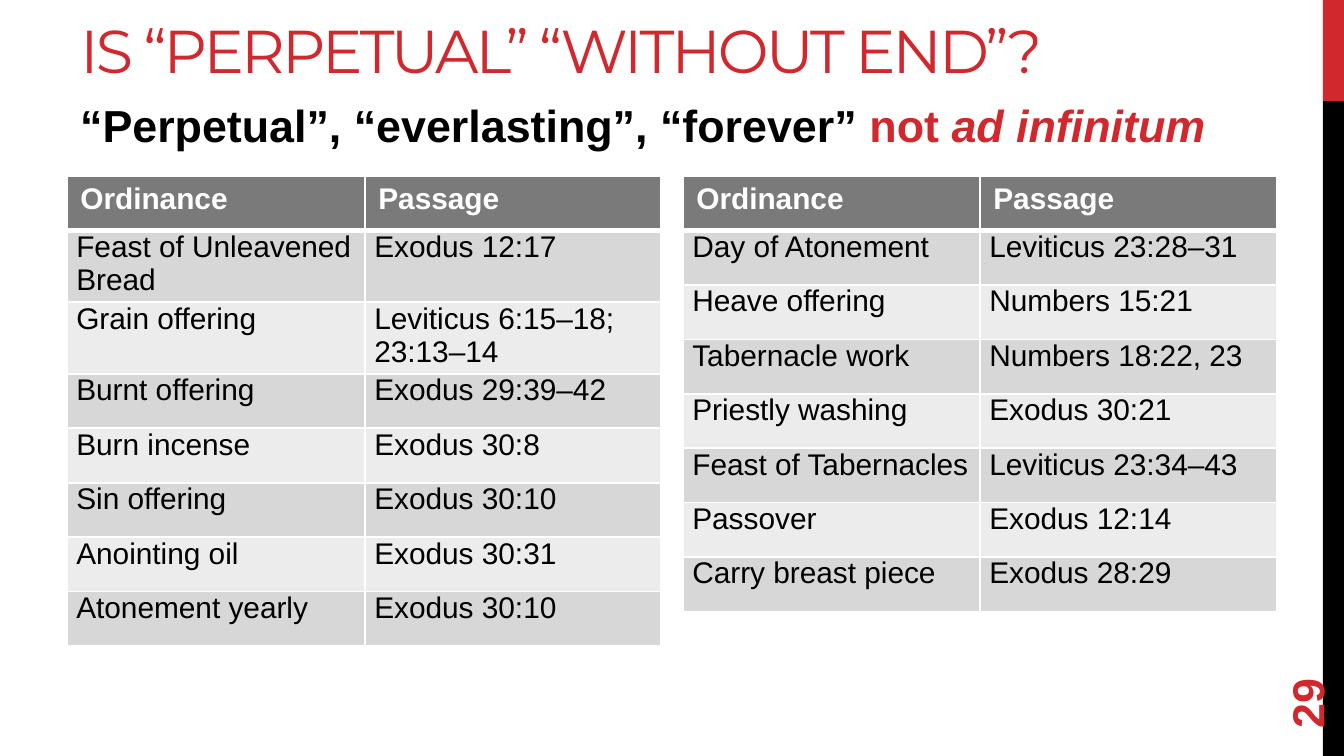
from pptx import Presentation
from pptx import util as u
from pptx.dml.color import RGBColor
from pptx.enum import shapes, text
from pptx.oxml import parse_xml
from pptx.oxml.ns import nsdecls

WIDTH, HEIGHT = 1344, 756
SCALE = u.Inches(10) / WIDTH
COLORS = {
    "red": "D1282E", "black": "000000", "white": "FFFFFF",
    "header": "7A7A7A", "dark_band": "D7D7D7", "light_band": "ECECEC",
}

LEFT_ROWS = [
    ("Feast of Unleavened Bread", "Exodus 12:17"),
    ("Grain offering", "Leviticus 6:15–18; \n23:13–14"),
    ("Burnt offering", "Exodus 29:39–42"),
    ("Burn incense", "Exodus 30:8"),
    ("Sin offering", "Exodus 30:10"),
    ("Anointing oil", "Exodus 30:31"),
    ("Atonement yearly", "Exodus 30:10"),
]
RIGHT_ROWS = [
    ("Day of Atonement", "Leviticus 23:28–31"),
    ("Heave offering", "Numbers 15:21"),
    ("Tabernacle work", "Numbers 18:22, 23"),
    ("Priestly washing", "Exodus 30:21"),
    ("Feast of Tabernacles", "Leviticus 23:34–43"),
    ("Passover", "Exodus 12:14"),
    ("Carry breast piece", "Exodus 28:29"),
]


def px(value):
    return u.Emu(round(value * SCALE))


def rgb(name):
    return RGBColor.from_string(COLORS[name])


class Board:
    """Holds the style and the current slide."""
    font = "Arial"
    title_font = "Montserrat"

    def __init__(self, deck):
        self.slide = deck.slides.add_slide(deck.slide_layouts[5])

    def span(self, para, words, size, color, bold=False, italic=False, font=None):
        span = para.add_run()
        span.text = words
        span.font.name = font or self.font
        span.font.size = u.Pt(size)
        span.font.bold = bold
        span.font.italic = italic
        span.font.color.rgb = rgb(color)
        return span

    def bar(self, left, top, width, height, color):
        bar = self.slide.shapes.add_shape(
            shapes.MSO_SHAPE.RECTANGLE, *map(px, (left, top, width, height)))
        bar.shadow.inherit = False
        bar.fill.solid()
        bar.fill.fore_color.rgb = rgb(color)
        bar.line.fill.background()

    def title(self, left, top, width, height, words):
        box = self.slide.shapes.title
        box.left, box.top, box.width, box.height = map(px, (left, top, width, height))
        frame = box.text_frame
        frame.auto_size = text.MSO_AUTO_SIZE.NONE
        frame.vertical_anchor = text.MSO_ANCHOR.MIDDLE
        para = frame.paragraphs[0]
        para.alignment = text.PP_ALIGN.LEFT
        span = self.span(para, words, 32.4, "red", font=self.title_font)
        span.font._element.set("spc", "-150")

    def textbox(self, left, top, width, height, spans, anchor=text.MSO_ANCHOR.TOP,
                rotation=0, before=0, after=0):
        box = self.slide.shapes.add_textbox(*map(px, (left, top, width, height)))
        box.rotation = rotation
        frame = box.text_frame
        frame.word_wrap = True
        frame.vertical_anchor = anchor
        para = frame.paragraphs[0]
        para.space_before, para.space_after = u.Pt(before), u.Pt(after)
        for words, color, italic in spans:
            self.span(para, words, 24, color, bold=True, italic=italic)

    def borders(self, cell, top, bottom):
        widths = {"lnL": 1, "lnR": 1, "lnT": top, "lnB": bottom}
        for place, (tag, width) in enumerate(widths.items()):
            line = parse_xml(
                f'<a:{tag} {nsdecls("a")} w="{u.Pt(width)}"><a:solidFill>'
                f'<a:srgbClr val="{COLORS["white"]}"/></a:solidFill></a:{tag}>')
            cell._tc.get_or_add_tcPr().insert(place, line)

    def table(self, left, top, columns, height, rows):
        rows = [("Ordinance", "Passage"), *rows]
        table = self.slide.shapes.add_table(
            len(rows), len(columns), px(left), px(top),
            px(sum(columns)), px(height)).table
        for column, width in zip(table.columns, columns):
            column.width = px(width)
        for r, row in enumerate(rows):
            header = r == 0
            band = "header" if header else "dark_band" if r % 2 else "light_band"
            for c, words in enumerate(row):
                cell = table.cell(r, c)
                cell.fill.solid()
                cell.fill.fore_color.rgb = rgb(band)
                self.borders(cell, 3 if r == 1 else 1, 3 if header else 1)
                if not header:
                    cell.margin_left = cell.margin_right = u.Inches(0.07)
                    cell.margin_top = cell.margin_bottom = 0
                para = cell.text_frame.paragraphs[0]
                for n, part in enumerate(words.split("\n")):
                    if n:
                        para.add_line_break()
                    self.span(para, part, 16, "white" if header else "black", bold=header)


def main():
    deck = Presentation()
    deck.slide_width, deck.slide_height = px(WIDTH), px(HEIGHT)
    board = Board(deck)

    # Side bars
    board.bar(1323, 0, 21, 101, "red")
    board.bar(1323, 101, 21, 655, "black")

    # Title and statement
    board.title(67, 9, 1210, 81, "IS “PERPETUAL” “WITHOUT END”?")
    board.textbox(67, 91, 1210, 634, [
        ("“Perpetual”, “everlasting”, “forever” ", "black", False),
        ("not ", "red", False),
        ("ad infinitum", "red", True),
    ], before=2.4, after=6)

    # Page number
    board.textbox(1234, 642, 145, 54, [("29", "red", False)],
                  anchor=text.MSO_ANCHOR.MIDDLE, rotation=270)

    # Ordinance tables
    board.table(683, 176, (297, 297), 436, RIGHT_ROWS)
    board.table(67, 176, (298, 296), 436, LEFT_ROWS)

    deck.save("out.pptx")


if __name__ == "__main__":
    main()
